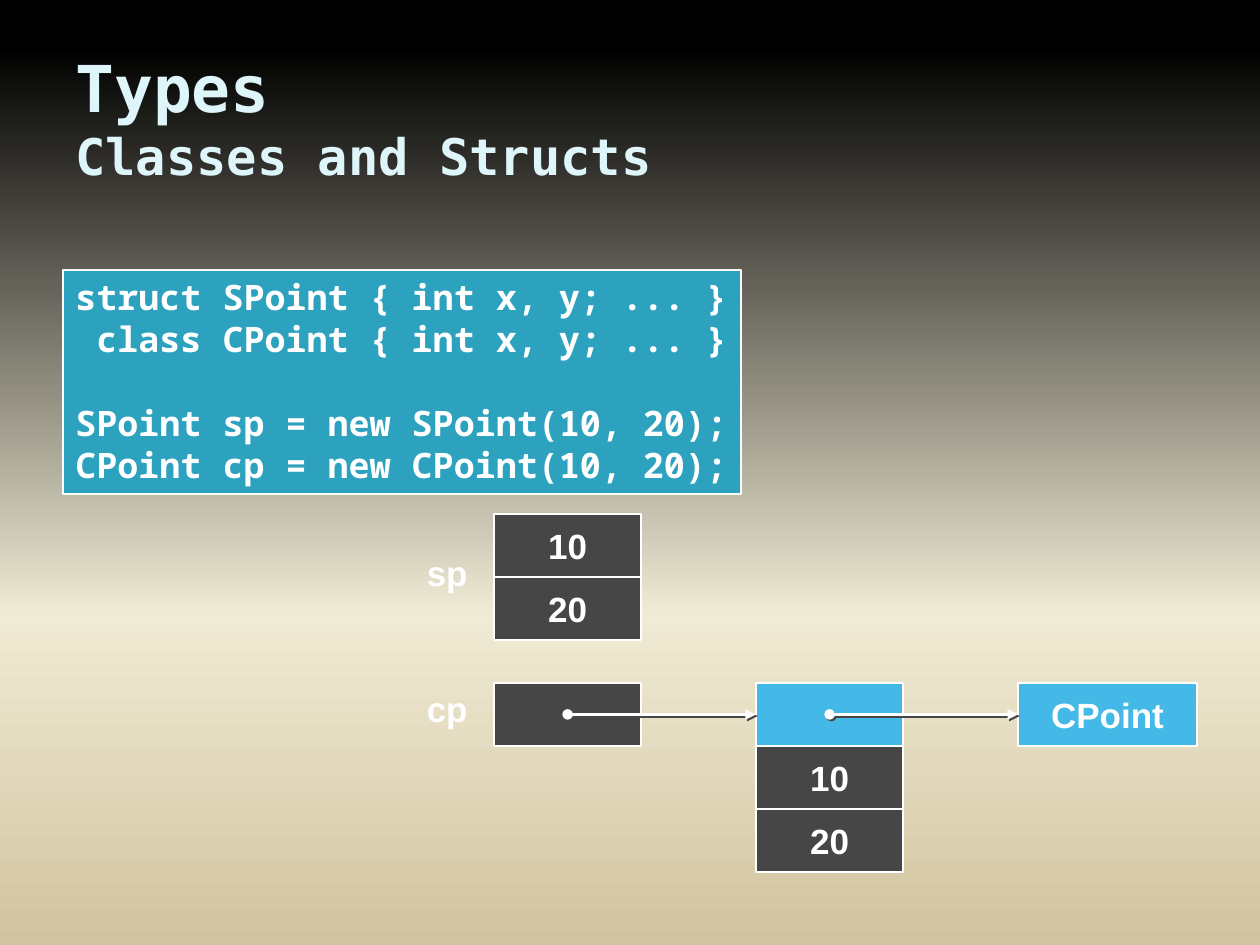
import copy

import lxml.etree
import pptx
import pptx.dml.color
import pptx.enum.shapes
import pptx.enum.text
import pptx.oxml
import pptx.oxml.ns
import pptx.util
from pptx.util import Inches, Pt

RGBColor = pptx.dml.color.RGBColor
BLACK = RGBColor(0x00, 0x00, 0x00)
CREAM = RGBColor(0xF0, 0xEB, 0xD5)
SAND = RGBColor(0xD1, 0xC3, 0x9F)
PALE_CYAN = RGBColor(0xDE, 0xF5, 0xFA)
TEAL = RGBColor(0x2D, 0xA2, 0xBF)
GRAY = RGBColor(0x46, 0x46, 0x46)
SKY = RGBColor(0x44, 0xB9, 0xE8)
WHITE = RGBColor(0xFF, 0xFF, 0xFF)

ALIGN = pptx.enum.text.PP_ALIGN
MIDDLE = pptx.enum.text.MSO_ANCHOR.MIDDLE
RECTANGLE = pptx.enum.shapes.MSO_SHAPE.RECTANGLE
STRAIGHT = pptx.enum.shapes.MSO_CONNECTOR.STRAIGHT
qn = pptx.oxml.ns.qn


def style_paragraph(paragraph, typeface, color, size=20, align=ALIGN.LEFT):
    paragraph.alignment = align
    font = paragraph.font
    font.name = typeface
    font.size = Pt(size)
    font.bold = True
    font.color.rgb = color


def add_box(left, top, width, height, fill):
    """Add a white-outlined rectangle, measured in inches, whose text does not wrap."""
    box = slide.shapes.add_shape(
        RECTANGLE, Inches(left), Inches(top), Inches(width), Inches(height))
    box.shadow.inherit = False
    box.fill.solid()
    box.fill.fore_color.rgb = fill
    box.line.color.rgb = WHITE
    box.line.width = Pt(1)
    box.text_frame.word_wrap = False
    return box


deck = pptx.Presentation()
deck.slide_width = Inches(10)
deck.slide_height = Inches(7.5)
slide = deck.slides.add_slide(deck.slide_layouts[6])

# Background: black fading through cream to sand, top to bottom
backdrop = slide.background.fill
backdrop.gradient()
backdrop.gradient_angle = 270
stop_list = next(slide.element.iter(qn("a:gsLst")))
stop_list.append(copy.deepcopy(stop_list[0]))
for stop, (position, color) in zip(
        backdrop.gradient_stops, [(0.05, BLACK), (0.65, CREAM), (1, SAND)]):
    stop.position = position
    stop.color.rgb = color

# Title and subtitle
title = slide.shapes.add_textbox(Inches(0.5), Inches(0.3), Inches(9), Inches(1.25))
title.text_frame.word_wrap = True
title.text_frame.vertical_anchor = MIDDLE
heading = title.text_frame.paragraphs[0]
style_paragraph(heading, "DejaVu Sans Mono", PALE_CYAN, 36.9)
heading.add_run().text = "Types"
heading.add_line_break()
subtitle = heading.add_run()
subtitle.text = "Classes and Structs"
subtitle.font.size = Pt(28.8)

# Code
code = add_box(0.5, 2.14, 5.38, 1.78, TEAL)
code.text_frame.vertical_anchor = pptx.enum.text.MSO_ANCHOR.TOP
code.text_frame.text = "\n".join([
    "struct SPoint { int x, y; ... }",
    " class CPoint { int x, y; ... }",
    "SPoint sp = new SPoint(10, 20);",
    "CPoint cp = new CPoint(10, 20);",
])
for code_line in code.text_frame.paragraphs:
    style_paragraph(code_line, "Noto Sans Mono", WHITE)
code.text_frame.paragraphs[2].space_before = Pt(24)

# Memory cells
CELL_WIDTH, CELL_HEIGHT = 1.17, 0.5
VARIABLE_X, OBJECT_X, TYPE_X = 3.92, 6, 8.08
SP_Y, CP_Y = 4.08, 5.42
for left, top, width, fill, value in [
    (VARIABLE_X, SP_Y, CELL_WIDTH, GRAY, "10"),
    (VARIABLE_X, SP_Y + CELL_HEIGHT, CELL_WIDTH, GRAY, "20"),
    (VARIABLE_X, CP_Y, CELL_WIDTH, GRAY, ""),
    (OBJECT_X, CP_Y, CELL_WIDTH, SKY, ""),
    (OBJECT_X, CP_Y + CELL_HEIGHT, CELL_WIDTH, GRAY, "10"),
    (OBJECT_X, CP_Y + 2 * CELL_HEIGHT, CELL_WIDTH, GRAY, "20"),
    (TYPE_X, CP_Y, 1.42, SKY, "CPoint"),
]:
    cell = add_box(left, top, width, CELL_HEIGHT, fill)
    if value:
        cell.text_frame.text = value
        cell.text_frame.vertical_anchor = MIDDLE
        style_paragraph(cell.text_frame.paragraphs[0], "Arial", WHITE, align=ALIGN.CENTER)

# Variable names
for name, top in [("sp", 4.33), ("cp", 5.41)]:
    label = slide.shapes.add_textbox(Inches(3.17), Inches(top), Inches(0.64), Inches(0.43))
    label.text_frame.word_wrap = True
    label.text_frame.vertical_anchor = MIDDLE
    label.text_frame.text = name
    style_paragraph(label.text_frame.paragraphs[0], "Arial", WHITE, align=ALIGN.RIGHT)

# References, from the middle of a cell to the edge of the next
reference_y = Inches(CP_Y + CELL_HEIGHT / 2)
for source_x, target_x in [(VARIABLE_X, OBJECT_X), (OBJECT_X, TYPE_X)]:
    reference = slide.shapes.add_connector(
        STRAIGHT, Inches(source_x + CELL_WIDTH / 2), reference_y,
        Inches(target_x), reference_y)
    reference.line.color.rgb = WHITE
    reference.line.width = Pt(2)
    outline = reference.line._get_or_add_ln()
    lxml.etree.SubElement(outline, qn("a:headEnd"), type="oval")
    lxml.etree.SubElement(outline, qn("a:tailEnd"), type="triangle")
    effects = lxml.etree.SubElement(reference.element.spPr, qn("a:effectLst"))
    shadow = lxml.etree.SubElement(
        effects, qn("a:outerShdw"), dist=str(Pt(1.4)), dir="2700000", algn="ctr",
        rotWithShape="0")
    lxml.etree.SubElement(shadow, qn("a:srgbClr"), val=str(GRAY))

deck.save("out.pptx")
